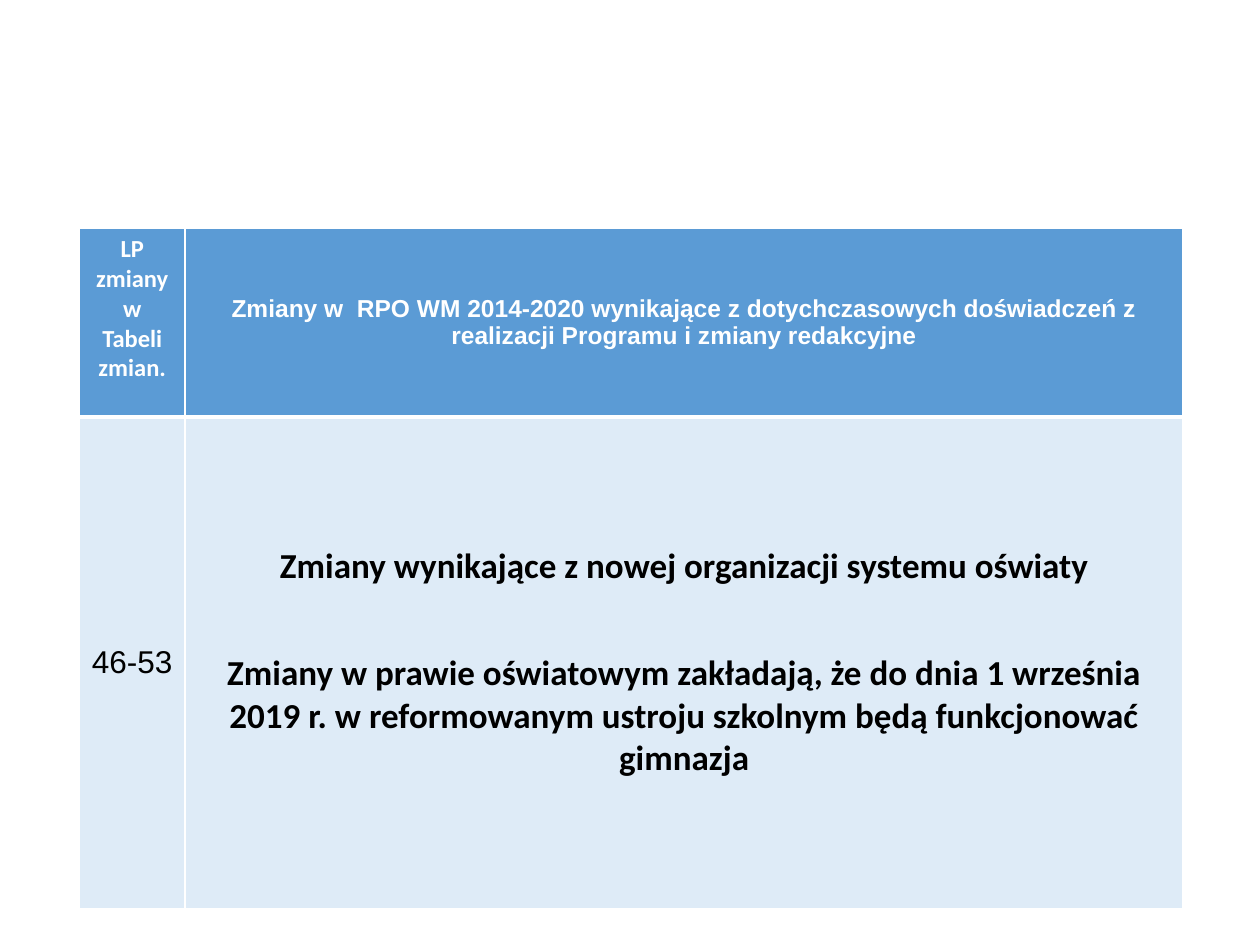
from lxml.etree import SubElement
from pptx import Presentation
from pptx.dml.color import RGBColor
from pptx.enum.text import MSO_ANCHOR as ANCHOR, PP_ALIGN as ALIGN
from pptx.oxml.ns import qn
from pptx.util import Inches, Pt

COLORS = {"header": "5B9BD5", "body": "DEEBF7", "white": "FFFFFF", "black": "000000"}

# Content: each cell is a list of paragraphs
ROWS = [
    [["LP zmiany w Tabeli zmian."],
     ["Zmiany w  RPO WM 2014-2020 wynikające z dotychczasowych doświadczeń "
      "z realizacji Programu i zmiany redakcyjne"]],
    [["46-53"],
     ["Zmiany wynikające z nowej organizacji systemu oświaty",
      "Zmiany w prawie oświatowym zakładają, że do dnia 1 września 2019 r. "
      "w reformowanym ustroju szkolnym będą funkcjonować gimnazja"]],
]
# Font, size, bold, alignment, anchor
STYLES = [
    [("Calibri", 14, True, ALIGN.CENTER, ANCHOR.TOP),
     ("Arial", 14, True, ALIGN.CENTER, ANCHOR.MIDDLE)],
    [("Arial", 18, False, ALIGN.LEFT, ANCHOR.MIDDLE),
     ("Calibri", 20, True, ALIGN.CENTER, ANCHOR.MIDDLE)],
]
ROW_COLORS = [("header", "white"), ("body", "black")]
COL_WIDTHS = [0.84, 7.92]
ROW_HEIGHTS = [1.5, 3.9]
LEFT, TOP = 0.63, 1.81
RULE = 3  # line under the header, in points
GAP_AFTER, LAST_AFTER = 36.5, 6


def rgb(name):
    return RGBColor.from_string(COLORS[name])


def add_borders(cell, top, bottom):
    tcPr = cell._tc.get_or_add_tcPr()
    for i, (side, width) in enumerate([("L", 1), ("R", 1), ("T", top), ("B", bottom)]):
        ln = tcPr.makeelement(qn(f"a:ln{side}"), {"w": str(Pt(width))})
        fill = SubElement(ln, qn("a:solidFill"))
        SubElement(fill, qn("a:srgbClr"), val=COLORS["white"])
        tcPr.insert(i, ln)


def fill_cell(cell, paragraphs, style, color):
    font, size, bold, align, anchor = style
    cell.vertical_anchor = anchor
    tf = cell.text_frame
    for i, text in enumerate(paragraphs):
        p = tf.paragraphs[0] if i == 0 else tf.add_paragraph()
        p.add_run().text = text
        p.alignment = align
        if len(paragraphs) > 1:
            p.space_after = Pt(GAP_AFTER if i < len(paragraphs) - 1 else LAST_AFTER)
        f = p.font
        f.name, f.size, f.bold = font, Pt(size), bold
        f.color.rgb = rgb(color)


prs = Presentation()
prs.slide_width, prs.slide_height = Inches(10), Inches(7.5)
s = prs.slides.add_slide(prs.slide_layouts[6])

# Table of changes
table = s.shapes.add_table(
    len(ROWS), len(COL_WIDTHS), Inches(LEFT), Inches(TOP),
    Inches(sum(COL_WIDTHS)), Inches(sum(ROW_HEIGHTS))).table
for column, width in zip(table.columns, COL_WIDTHS):
    column.width = Inches(width)
for r, (row, height) in enumerate(zip(table.rows, ROW_HEIGHTS)):
    row.height = Inches(height)
    fill, color = ROW_COLORS[r]
    for c, cell in enumerate(row.cells):
        cell.fill.solid()
        cell.fill.fore_color.rgb = rgb(fill)
        fill_cell(cell, ROWS[r][c], STYLES[r][c], color)
        add_borders(cell, top=RULE if r == 1 else 1, bottom=RULE if r == 0 else 1)

# Body text cell has no vertical insets
body = table.cell(1, 1)
body.margin_top = body.margin_bottom = 0

prs.save("out.pptx")
